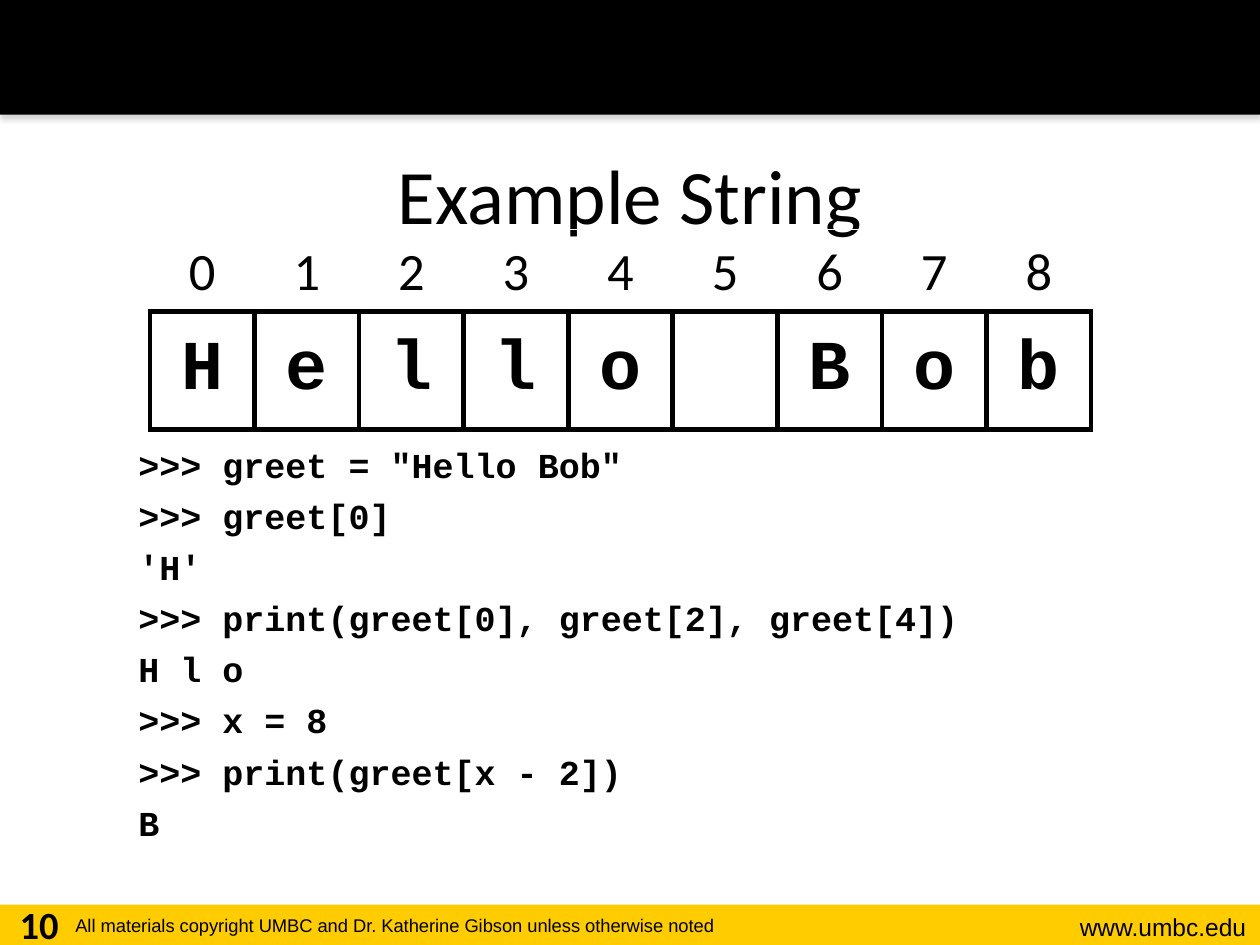
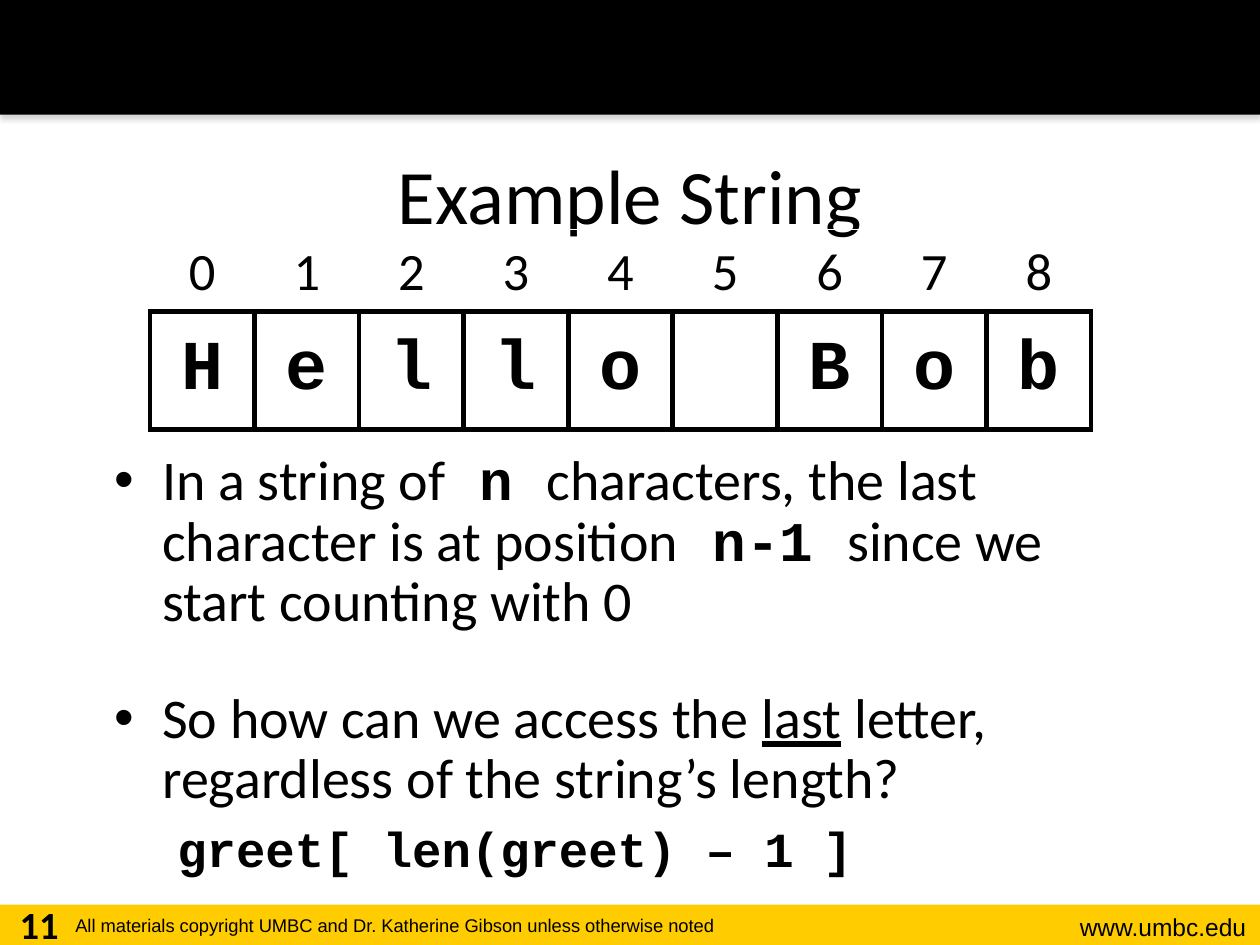
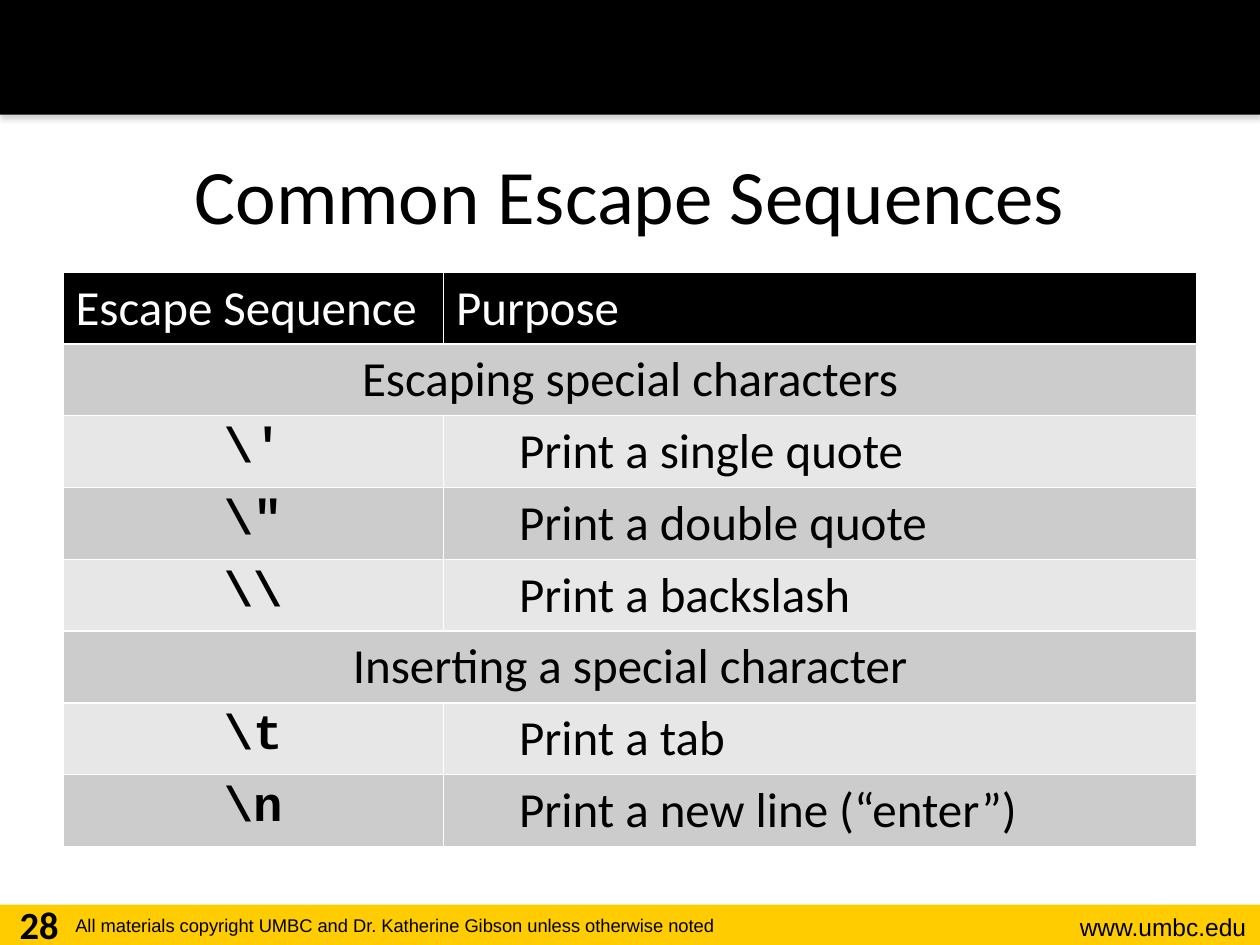
import pptx
import pptx.util
import pptx.dml.color
import pptx.enum.shapes
import pptx.enum.text
import pptx.oxml
import pptx.oxml.ns

Inches = pptx.util.Inches
Pt = pptx.util.Pt
RGBColor = pptx.dml.color.RGBColor
ALIGN = pptx.enum.text.PP_ALIGN
ANCHOR = pptx.enum.text.MSO_ANCHOR
NSDECL = pptx.oxml.ns.nsdecls("a")

BLACK = RGBColor(0x00, 0x00, 0x00)
WHITE = RGBColor(0xFF, 0xFF, 0xFF)
GOLD = RGBColor(0xFF, 0xCC, 0x00)
SHADOW_GRAY = RGBColor(0x80, 0x80, 0x80)
DARK_ROW = RGBColor(0xCC, 0xCC, 0xCC)
LIGHT_ROW = RGBColor(0xE7, 0xE7, 0xE7)

BODY_FONT = "Calibri"
CODE_FONT = "Courier New"
FOOTER_FONT = "Arial"

GREETING = "Hello Bob"
SESSION = [
    '>>> greet = "Hello Bob"',
    ">>> greet[0]",
    "'H'",
    ">>> print(greet[0], greet[2], greet[4])",
    "H l o",
    ">>> x = 8",
    ">>> print(greet[x - 2])",
    "B",
]
ESCAPES = [
    ("Escaping special characters", None),
    ("\\'", "Print a single quote"),
    ('\\"', "Print a double quote"),
    ("\\\\", "Print a backslash"),
    ("Inserting a special character", None),
    ("\\t", "Print a tab"),
    ("\\n", "Print a new line (“enter”)"),
]


def add_run(paragraph, text, size, font=BODY_FONT, color=BLACK, bold=False, underline=False):
    run = paragraph.add_run()
    run.text = text
    run.font.size = Pt(size)
    run.font.name = font
    run.font.color.rgb = color
    run.font.bold = bold
    run.font.underline = underline


def add_box(slide, left, top, width, height):
    box = slide.shapes.add_textbox(Inches(left), Inches(top), Inches(width), Inches(height))
    box.text_frame.word_wrap = True
    return box.text_frame


def add_label(slide, place, text, size, font, align, bold=False):
    paragraph = add_box(slide, *place).paragraphs[0]
    paragraph.alignment = align
    add_run(paragraph, text, size, font, bold=bold)


def add_band(slide, top, height, color):
    band = slide.shapes.add_shape(
        pptx.enum.shapes.MSO_SHAPE.RECTANGLE, 0, Inches(top), Inches(10), Inches(height))
    band.shadow.inherit = False
    band.fill.solid()
    band.fill.fore_color.rgb = color
    band.line.fill.background()
    return band


def add_band_shadow(band):
    effects = band._element.spPr.find(pptx.oxml.ns.qn("a:effectLst"))
    effects.append(pptx.oxml.parse_xml(
        f'<a:outerShdw {NSDECL} blurRad="{Pt(3.1)}" dist="{Pt(1.8)}" dir="5400000" rotWithShape="0">'
        f'<a:srgbClr val="{SHADOW_GRAY}"><a:alpha val="35000"/></a:srgbClr></a:outerShdw>'))


def add_lecture_slide(deck, title_text, number):
    slide = deck.slides.add_slide(deck.slide_layouts[5])
    add_band(slide, 7.18, 0.32, GOLD)
    add_band_shadow(add_band(slide, 0, 0.91, BLACK))
    add_label(slide, (8, 7.19, 1.99, 0.34), "www.umbc.edu", 14, FOOTER_FONT, ALIGN.RIGHT)
    add_label(slide, (0.5, 7.21, 6.56, 0.29),
              "All materials copyright UMBC and Dr. Katherine Gibson unless otherwise noted",
              10.5, FOOTER_FONT, ALIGN.LEFT)
    add_label(slide, (0, 7.1, 0.62, 0.4), str(number), 22, BODY_FONT, ALIGN.CENTER, bold=True)

    title = slide.shapes.title
    title.left, title.top = Inches(0.5), Inches(0.91)
    title.width, title.height = Inches(9), Inches(1.25)
    title.text_frame.vertical_anchor = ANCHOR.MIDDLE
    heading = title.text_frame.paragraphs[0]
    heading.alignment = ALIGN.CENTER
    add_run(heading, title_text, 44)
    return slide


def add_plain_table(slide, left, top, column_widths, row_heights):
    table = slide.shapes.add_table(
        len(row_heights), len(column_widths), Inches(left), Inches(top),
        Inches(sum(column_widths)), Inches(sum(row_heights))).table
    table.first_row = False
    table.horz_banding = False
    for column, width in zip(table.columns, column_widths):
        column.width = Inches(width)
    for row, height in zip(table.rows, row_heights):
        row.height = Inches(height)
    return table


def set_borders(cell, color, width, sides="LRTB"):
    properties = cell._tc.get_or_add_tcPr()
    for side in sides:
        properties.append(pptx.oxml.parse_xml(
            f'<a:ln{side} {NSDECL} w="{Pt(width)}"><a:solidFill><a:srgbClr val="{color}"/>'
            f'</a:solidFill></a:ln{side}>'))


def fill_cell(cell, color):
    cell.fill.solid()
    cell.fill.fore_color.rgb = color


def write_cell(cell, text, size, align=ALIGN.CENTER, **style):
    paragraph = cell.text_frame.paragraphs[0]
    paragraph.alignment = align
    add_run(paragraph, text, size, **style)


def add_index_table(slide, word):
    table = add_plain_table(slide, 1.19, 1.82, [0.83] * len(word), [0.65, 0.94])
    for index, letter in enumerate(word):
        index_cell, letter_cell = table.cell(0, index), table.cell(1, index)
        set_borders(index_cell, BLACK, 3, "B")
        index_cell.fill.background()
        index_cell.vertical_anchor = ANCHOR.BOTTOM
        write_cell(index_cell, str(index), 30)
        set_borders(letter_cell, BLACK, 3)
        fill_cell(letter_cell, WHITE)
        letter_cell.vertical_anchor = ANCHOR.MIDDLE
        if letter != " ":
            write_cell(letter_cell, letter, 40, font=CODE_FONT, bold=True)


def add_session(slide, lines):
    frame = add_box(slide, 1, 3.47, 8.5, 3.29)
    for number, line in enumerate(lines):
        paragraph = frame.add_paragraph() if number else frame.paragraphs[0]
        if number:
            paragraph.space_before = Pt(5.2)
        add_run(paragraph, line, 20, CODE_FONT, bold=True)


def indent(paragraph, margin, hanging=0, bullet=None):
    properties = paragraph._p.get_or_add_pPr()
    properties.set("marL", str(Inches(margin)))
    properties.set("indent", str(-Inches(hanging)))
    paragraph.line_spacing = 0.9
    if bullet:
        properties.append(pptx.oxml.parse_xml(f'<a:buFont {NSDECL} typeface="Arial"/>'))
        properties.append(pptx.oxml.parse_xml(f'<a:buChar {NSDECL} char="{bullet}"/>'))


def add_last_letter_notes(slide):
    frame = add_box(slide, 0.81, 3.54, 8.5, 3.04)

    position = frame.paragraphs[0]
    indent(position, 0.38, 0.38, "•")
    add_run(position, "In a string of", 32)
    add_run(position, " n ", 32, CODE_FONT, bold=True)
    add_run(position, "characters, the last", 32)
    position.add_line_break()
    add_run(position, "character is at position", 32)
    add_run(position, " n-1 ", 32, CODE_FONT, bold=True)
    add_run(position, "since we", 32)
    position.add_line_break()
    add_run(position, "start counting with 0", 32)

    question = frame.add_paragraph()
    indent(question, 0.38, 0.38, "•")
    question.space_before = Pt(32)
    add_run(question, "So how can we access the ", 32)
    add_run(question, "last", 32, underline=True)
    add_run(question, " letter, regardless of the string’s length?", 32)

    answer = frame.add_paragraph()
    indent(answer, 0.5)
    answer.space_before = Pt(8)
    add_run(answer, "greet[ len(greet) – 1 ]", 28, CODE_FONT, bold=True)


def add_escape_table(slide):
    table = add_plain_table(slide, 0.5, 2.16, [3.02, 5.98], [0.57] * (len(ESCAPES) + 1))
    for row in range(len(ESCAPES) + 1):
        for column in range(2):
            cell = table.cell(row, column)
            set_borders(cell, WHITE, 1)
            fill_cell(cell, BLACK if row == 0 else DARK_ROW if row % 2 else LIGHT_ROW)

    for column, heading in enumerate(("Escape Sequence", "Purpose")):
        write_cell(table.cell(0, column), heading, 28, ALIGN.LEFT, color=WHITE)

    for row, (sequence, purpose) in enumerate(ESCAPES, start=1):
        first, second = table.cell(row, 0), table.cell(row, 1)
        if purpose is None:
            first.merge(second)
            write_cell(first, sequence, 28)
        else:
            write_cell(first, sequence, 28, font=CODE_FONT, bold=True)
            second.margin_left = Inches(0.6)
            write_cell(second, purpose, 28, ALIGN.LEFT)


def main():
    deck = pptx.Presentation()
    deck.slide_width, deck.slide_height = Inches(10), Inches(7.5)

    indexing = add_lecture_slide(deck, "Example String", 10)
    add_session(indexing, SESSION)
    add_index_table(indexing, GREETING)

    last_letter = add_lecture_slide(deck, "Example String", 11)
    add_index_table(last_letter, GREETING)
    add_last_letter_notes(last_letter)

    add_escape_table(add_lecture_slide(deck, "Common Escape Sequences", 28))

    deck.save("out.pptx")


if __name__ == "__main__":
    main()
